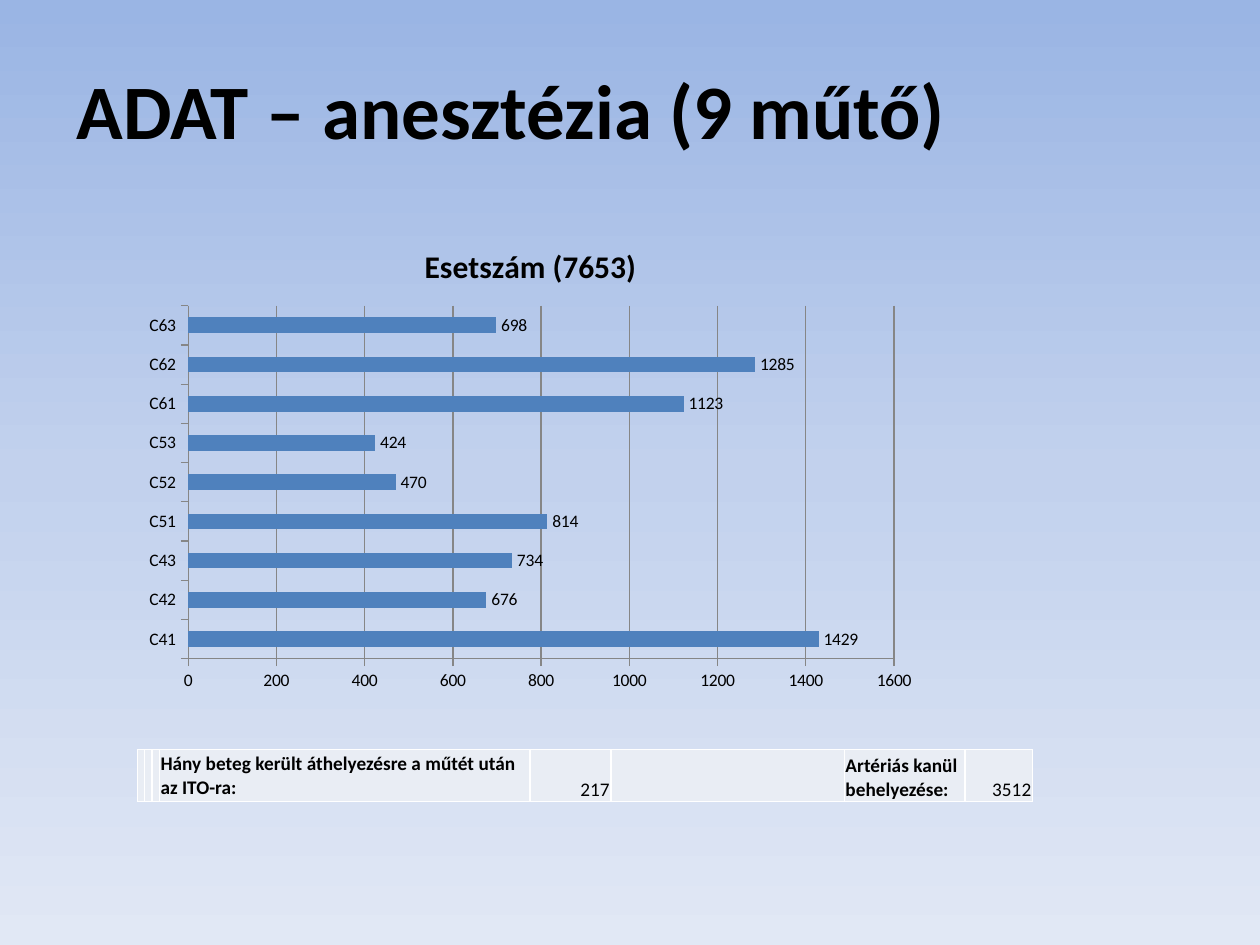
from copy import deepcopy

from pptx import Presentation
from pptx.chart.data import CategoryChartData
from pptx.dml.color import RGBColor
from pptx.enum.chart import XL_CHART_TYPE, XL_LABEL_POSITION, XL_TICK_MARK
from pptx.enum.text import MSO_ANCHOR, PP_ALIGN
from pptx.oxml import parse_xml
from pptx.oxml.ns import nsdecls, qn
from pptx.util import Pt

BAR = XL_CHART_TYPE.BAR_CLUSTERED
OUTSIDE_END = XL_LABEL_POSITION.OUTSIDE_END
TICK_OUT = XL_TICK_MARK.OUTSIDE
MIDDLE, BOTTOM = MSO_ANCHOR.MIDDLE, MSO_ANCHOR.BOTTOM
LEFT, RIGHT = PP_ALIGN.LEFT, PP_ALIGN.RIGHT

FONT = "Calibri"
COLORS = {
    "sky_top": "9AB5E4",
    "sky_middle": "C2D1ED",
    "sky_bottom": "E1E8F5",
    "text": "000000",
    "bar": "4F81BD",
    "axis": "868686",
    "cell": "E9EDF4",
    "border": "FFFFFF",
}


def style_font(font, size, bold=False):
    font.name = FONT
    font.size = Pt(size)
    font.bold = bold
    font.color.rgb = RGBColor.from_string(COLORS["text"])


presentation = Presentation()
presentation.slide_width = Pt(720)
presentation.slide_height = Pt(540)
slide = presentation.slides.add_slide(presentation.slide_layouts[5])

background = slide.background.fill
background.gradient()
background.gradient_angle = 270
stop_list = slide.element.find(".//" + qn("a:gsLst"))
stop_list.append(deepcopy(stop_list[-1]))
sky = [(0, "sky_top"), (0.5, "sky_middle"), (1, "sky_bottom")]
for stop, (position, color) in zip(background.gradient_stops, sky):
    stop.position = position
    stop.color.rgb = RGBColor.from_string(COLORS[color])

title = slide.shapes.title
title.left, title.top, title.width, title.height = Pt(36.7), Pt(31.7), Pt(544.3), Pt(60.5)
title.text_frame.text = "ADAT – anesztézia (9 műtő)"
title.text_frame.vertical_anchor = MIDDLE
title_paragraph = title.text_frame.paragraphs[0]
title_paragraph.alignment = LEFT
style_font(title_paragraph.runs[0].font, 44, True)

cases = {
    "C41": 1429, "C42": 676, "C43": 734,
    "C51": 814, "C52": 470, "C53": 424,
    "C61": 1123, "C62": 1285, "C63": 698,
}
chart_data = CategoryChartData()
chart_data.categories = list(cases)
chart_data.add_series("Esetszám", list(cases.values()))
chart = slide.shapes.add_chart(
    BAR, Pt(76.3), Pt(127.4), Pt(453.6), Pt(272.9), chart_data
).chart
style_font(chart.font, 10)
chart.has_legend = False
chart.has_title = True
chart.chart_title.include_in_layout = False
chart.chart_title.text_frame.text = "Esetszám (7653)"
style_font(chart.chart_title.text_frame.paragraphs[0].runs[0].font, 18, True)

plot = chart.plots[0]
plot.gap_width = 150
plot.vary_by_categories = False
plot.has_data_labels = True
plot.data_labels.show_value = True
plot.data_labels.position = OUTSIDE_END
style_font(plot.data_labels.font, 10)
series_fill = plot.series[0].format.fill
series_fill.solid()
series_fill.fore_color.rgb = RGBColor.from_string(COLORS["bar"])

chart.value_axis.has_major_gridlines = True
chart.value_axis.minimum_scale = 0
chart.value_axis.maximum_scale = 1600
chart.value_axis.major_unit = 200
for axis in (chart.category_axis, chart.value_axis):
    axis.major_tick_mark = TICK_OUT
    style_font(axis.tick_labels.font, 10)
for axis_line in (
    chart.category_axis.format.line,
    chart.value_axis.format.line,
    chart.value_axis.major_gridlines.format.line,
):
    axis_line.width = Pt(0.75)
    axis_line.color.rgb = RGBColor.from_string(COLORS["axis"])

columns = [
    (3.8, "", LEFT, BOTTOM, False),
    (4.2, "", LEFT, BOTTOM, False),
    (4.2, "", LEFT, BOTTOM, False),
    (211.7, "Hány beteg került áthelyezésre a műtét után az ITO-ra:", LEFT, MIDDLE, True),
    (46.3, "217", RIGHT, BOTTOM, False),
    (133.4, "", LEFT, BOTTOM, False),
    (68.9, "Artériás kanül behelyezése:", LEFT, BOTTOM, True),
    (38.7, "3512", RIGHT, BOTTOM, False),
]
table_width = sum(column[0] for column in columns)
table = slide.shapes.add_table(
    1, len(columns), Pt(78.5), Pt(428.4), Pt(table_width), Pt(29.5)
).table
table.first_row = False
table.horz_banding = False
for index, (width, text, alignment, anchor, bold) in enumerate(columns):
    table.columns[index].width = Pt(width)
    cell = table.cell(0, index)
    cell.margin_left = cell.margin_right = cell.margin_top = Pt(0.7)
    cell.margin_bottom = 0
    cell.vertical_anchor = anchor
    if text:
        cell.text_frame.text = text
        paragraph = cell.text_frame.paragraphs[0]
        paragraph.alignment = alignment
        style_font(paragraph.runs[0].font, 11, bold)
    cell_properties = cell._tc.get_or_add_tcPr()
    for side in ("lnL", "lnR", "lnT", "lnB"):
        cell_properties.append(parse_xml(
            f'<a:{side} {nsdecls("a")} w="{Pt(1)}"><a:solidFill>'
            f'<a:srgbClr val="{COLORS["border"]}"/></a:solidFill></a:{side}>'
        ))
    cell.fill.solid()
    cell.fill.fore_color.rgb = RGBColor.from_string(COLORS["cell"])

presentation.save("out.pptx")
